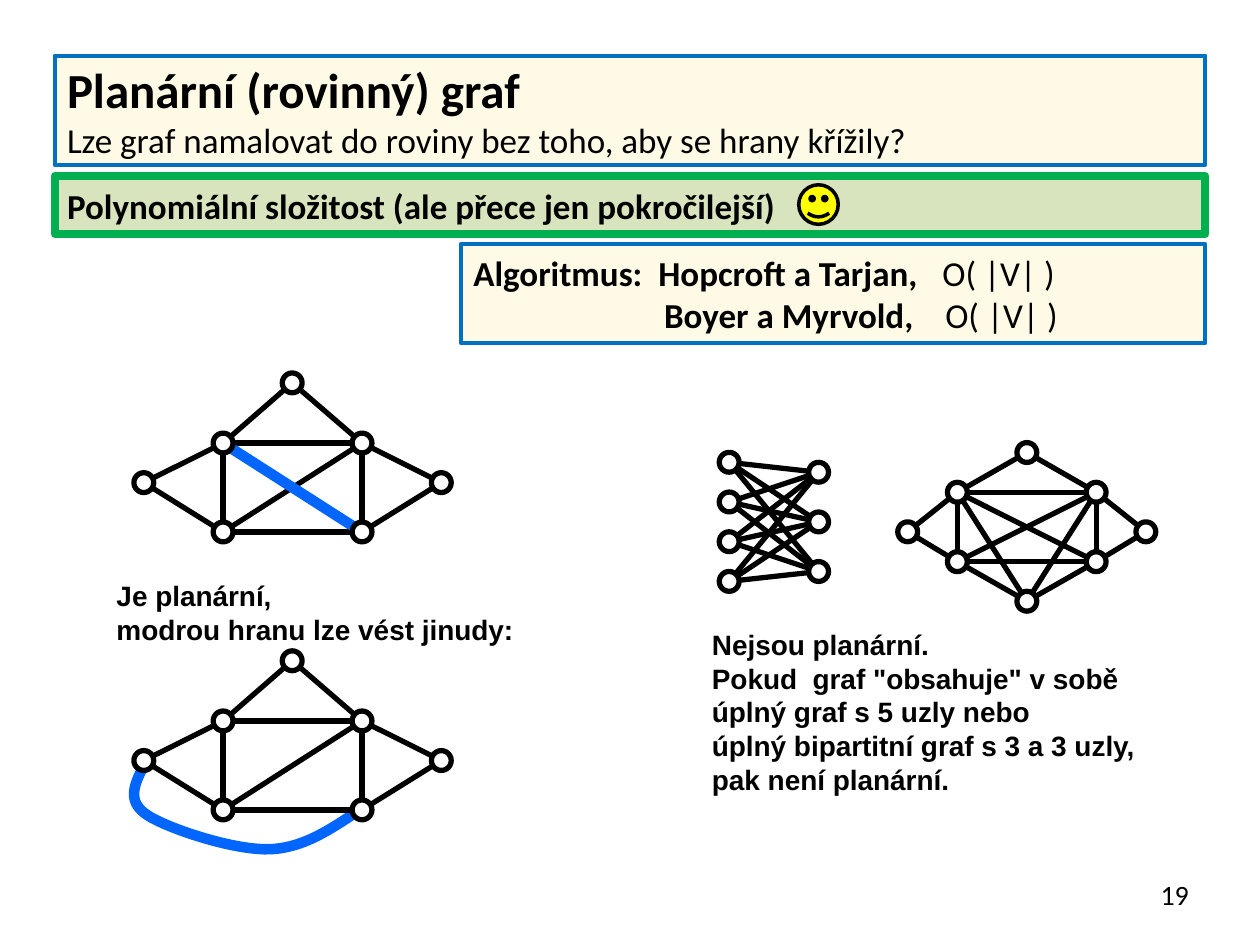
from dataclasses import dataclass
from itertools import product

from lxml.etree import SubElement
from pptx import Presentation
from pptx.dml.color import RGBColor as RGB
from pptx.enum.shapes import MSO_CONNECTOR as CONN, MSO_SHAPE as SHAPE
from pptx.enum.text import MSO_ANCHOR as ANCHOR, PP_ALIGN as ALIGN
from pptx.oxml.ns import qn
from pptx.util import Pt


@dataclass(frozen=True)
class Theme:
    ink: RGB = RGB(0, 0, 0)
    paper: RGB = RGB(0xFF, 0xFF, 0xFF)
    cream: RGB = RGB(0xFF, 0xFA, 0xE5)
    frame: RGB = RGB(0x00, 0x70, 0xC0)
    sage: RGB = RGB(0xD7, 0xE4, 0xBD)
    green: RGB = RGB(0x00, 0xB0, 0x50)
    yellow: RGB = RGB(0xFF, 0xFF, 0x00)
    blue: RGB = RGB(0x00, 0x66, 0xFF)
    head_font: str = "Calibri"
    note_font: str = "Arial"
    title: int = 28
    body: int = 20
    small: int = 16
    edge: int = 3
    thick: int = 6
    node: float = 11.34


T = Theme()

# Graph with seven nodes, drawn twice
HOUSE = {"top": (167, 218.8), "ul": (127.5, 253.2), "ur": (206.9, 253.2),
         "left": (82.2, 275.8), "right": (252.2, 275.8),
         "ll": (127.5, 304), "lr": (206.9, 304)}
HOUSE_EDGES = ["top ul", "top ur", "ul ur", "ul ll", "ur lr", "ll lr",
               "left ul", "left ll", "right ur", "right lr", "ll ur"]
HOUSE_DROP = 158.8
DETOUR_START = (206.6, 462.2)
DETOUR = [[(190, 473), (174.2, 484.6), (154.1, 485.3)],
          [(133.9, 486), (96.5, 473.8), (84.2, 465.8)],
          [(72, 457.9), (77, 447.8), (82.1, 437.8)]]

# Graph that contains the complete graph on five nodes
K5 = {"top": (586.8, 258.6), "ul": (547.1, 281.3), "ur": (626.4, 281.3),
      "left": (518.7, 303.9), "right": (654.8, 303.9),
      "ll": (547.1, 321), "lr": (626.4, 321), "bottom": (586.8, 343.6)}
K5_EDGES = ["top ul", "top ur", "ul ur", "ul ll", "ur lr", "ll lr",
            "ul lr", "ll ur", "bottom ul", "bottom ur", "bottom ll",
            "bottom lr", "left ul", "left ll", "right ur", "right lr"]


def paint(sp, fill, line, width):
    sp.shadow.inherit = False
    if fill is None:
        sp.fill.background()
    else:
        sp.fill.solid()
        sp.fill.fore_color.rgb = fill
    sp.line.color.rgb = line
    sp.line.width = Pt(width)


def add_shape(s, kind, box, fill, line, width):
    sp = s.shapes.add_shape(kind, *map(Pt, box))
    paint(sp, fill, line, width)
    return sp


def write(sp, lines, font, align=ALIGN.LEFT, anchor=ANCHOR.MIDDLE):
    """Each line is a list of (text, size, bold) runs."""
    tf = sp.text_frame
    tf.word_wrap = True
    tf.vertical_anchor = anchor
    for i, runs in enumerate(lines):
        p = tf.add_paragraph() if i else tf.paragraphs[0]
        p.alignment = align
        for text, size, bold in runs:
            r = p.add_run()
            r.text = text
            r.font.name, r.font.size, r.font.bold = font, Pt(size), bold
            r.font.color.rgb = T.ink
    return tf


def add_panel(s, box, lines, fill, line, width):
    sp = add_shape(s, SHAPE.RECTANGLE, box, fill, line, width)
    return write(sp, lines, T.head_font)


def add_note(s, box, lines):
    sp = s.shapes.add_textbox(*map(Pt, box))
    write(sp, [[(line, T.small, True)] for line in lines],
          T.note_font, anchor=ANCHOR.TOP)


def set_tabs(p, stops):
    tabs = SubElement(p._p.get_or_add_pPr(), qn("a:tabLst"))
    for stop in stops:
        SubElement(tabs, qn("a:tab"), pos=str(Pt(stop)), algn="l")


def add_edge(s, start, end, color=T.ink, width=T.edge):
    line = s.shapes.add_connector(CONN.STRAIGHT, *map(Pt, start + end))
    line.line.color.rgb = color
    line.line.width = Pt(width)
    SubElement(line._element.spPr, qn("a:effectLst"))


def add_graph(s, nodes, edges, highlight=None):
    for a, b in map(str.split, edges):
        add_edge(s, nodes[a], nodes[b])
    if highlight:
        a, b = highlight.split()
        add_edge(s, nodes[a], nodes[b], T.blue, T.thick)
    for x, y in nodes.values():
        box = (x - T.node / 2, y - T.node / 2, T.node, T.node)
        add_shape(s, SHAPE.OVAL, box, T.paper, T.ink, T.edge)


def add_curve(s, start, segments, steps=20):
    """Trace cubic Bezier segments as one open outline."""
    points, p0 = [], start
    for p1, p2, p3 in segments:
        for t in (i / steps for i in range(1, steps + 1)):
            u = 1 - t
            points.append(tuple(
                Pt(u**3 * a + 3 * u * u * t * b + 3 * u * t * t * c + t**3 * d)
                for a, b, c, d in zip(p0, p1, p2, p3)))
        p0 = p3
    builder = s.shapes.build_freeform(*map(Pt, start))
    builder.add_line_segments(points, close=False)
    paint(builder.convert_to_shape(), None, T.blue, T.thick)


def main():
    prs = Presentation()
    prs.slide_width, prs.slide_height = Pt(720), Pt(540)
    s = prs.slides.add_slide(prs.slide_layouts[6])

    # Title and complexity panels
    add_panel(s, (31.2, 31.8, 657.6, 62.5), [
        [("Planární (rovinný) graf", T.title, True)],
        [("Lze graf namalovat do roviny bez toho, aby se hrany křížily?",
          T.body, False)],
    ], T.cream, T.frame, 2.25)
    add_panel(s, (31.2, 100.4, 657.6, 33.6), [
        [("Polynomiální složitost (ale přece jen pokročilejší)", T.body, True)],
    ], T.sage, T.green, 4.5)
    add_shape(s, SHAPE.SMILEY_FACE, (456.4, 105.6, 22.6, 22.6),
              T.yellow, T.ink, 2)

    # Algorithms, aligned with tab stops
    tf = add_panel(s, (263.4, 139.4, 425.4, 56.8), [
        [("Algoritmus:\tHopcroft a Tarjan,", T.body, True),
         ("\tO( |V| )", T.body, False)],
        [("\tBoyer a Myrvold,", T.body, True), ("\tO( |V| )", T.body, False)],
    ], T.cream, T.frame, 2.25)
    for p, stops in zip(tf.paragraphs, [(105.7, 268), (109, 269.7)]):
        set_tabs(p, stops)

    # Planar graph: crossing edge, then the same edge led around
    add_graph(s, HOUSE, HOUSE_EDGES, highlight="ul lr")
    add_note(s, (59.5, 327, 249, 46),
             ["Je planární,", "modrou hranu lze vést jinudy:"])
    add_curve(s, DETOUR_START, DETOUR)
    lower = {name: (x, y + HOUSE_DROP) for name, (x, y) in HOUSE.items()}
    add_graph(s, lower, HOUSE_EDGES)

    # Non-planar graphs: complete bipartite and K5 based
    left = {f"a{i}": (416.7, 264.2 + 22.68 * i) for i in range(4)}
    right = {f"b{i}": (467.8, 269.9 + 28.35 * i) for i in range(3)}
    add_graph(s, left | right, map(" ".join, product(left, right)))
    add_graph(s, K5, K5_EDGES)
    add_note(s, (399.7, 355.2, 278, 104.4),
             ["Nejsou planární.", 'Pokud  graf "obsahuje" v sobě',
              "úplný graf s 5 uzly nebo",
              "úplný bipartitní graf s 3 a 3 uzly,", "pak není planární."])

    # Page number
    number = s.shapes.add_textbox(Pt(518.4), Pt(496.8), Pt(168), Pt(28.8))
    write(number, [[("19", T.small, False)]], T.head_font, ALIGN.RIGHT)

    prs.save("out.pptx")


if __name__ == "__main__":
    main()
